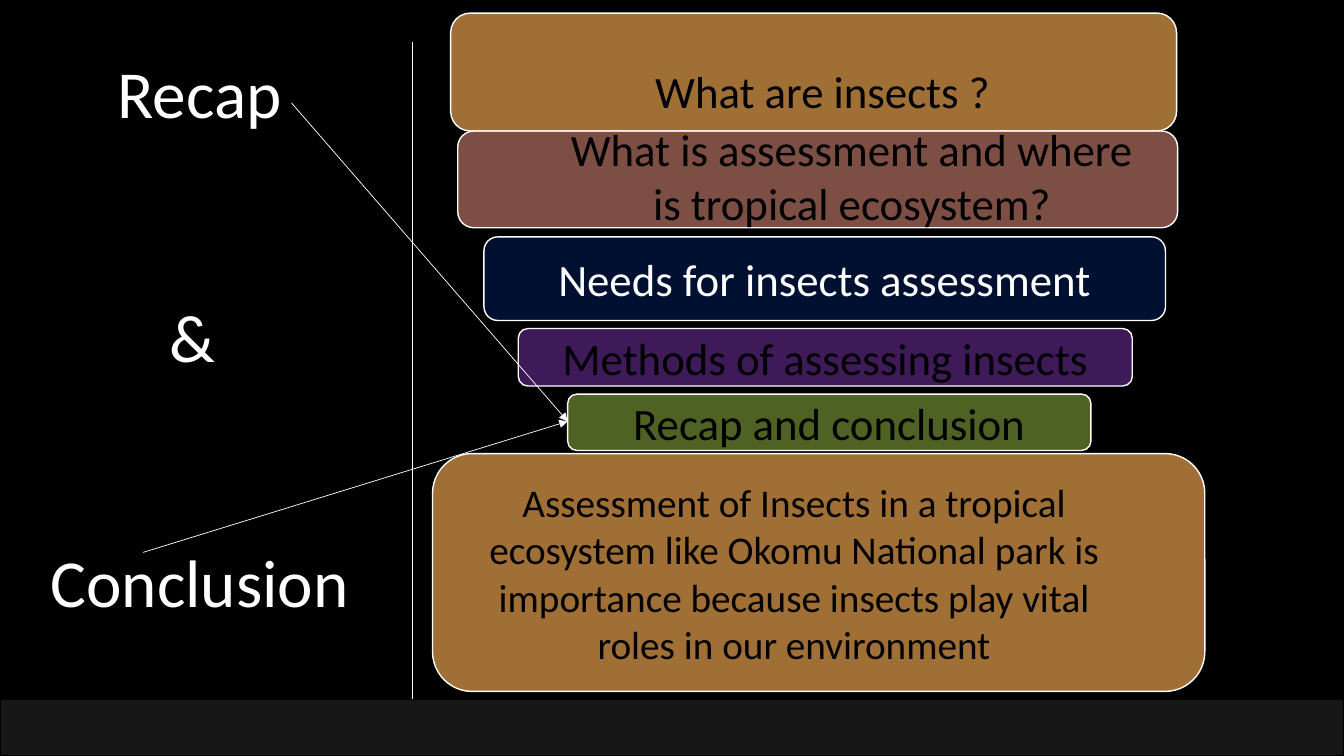
"""Build the recap and conclusion slide on insect assessment."""
from dataclasses import dataclass

import lxml.etree
import pptx
import pptx.dml.color
import pptx.enum.shapes
import pptx.enum.text
import pptx.oxml.ns
import pptx.util

Inches = pptx.util.Inches
Pt = pptx.util.Pt
Align = pptx.enum.text.PP_ALIGN
Preset = pptx.enum.shapes.MSO_SHAPE
qn = pptx.oxml.ns.qn

WHITE = "FFFFFF"
BLACK = "000000"


@dataclass(frozen=True)
class Panel:
    left: float
    top: float
    width: float
    height: float
    fill: str
    opacity: int = 100
    text: str = ""
    color: str = BLACK
    outline: str = WHITE
    preset: int = Preset.ROUNDED_RECTANGLE


@dataclass(frozen=True)
class Label:
    left: float
    top: float
    width: float
    height: float
    lines: tuple[str, ...]
    size: int = 32
    color: str = BLACK
    align: int = Align.CENTER
    gap: int = 0


@dataclass(frozen=True)
class Link:
    start: tuple[float, float]
    end: tuple[float, float]
    arrow: bool = True


TOPIC_ENTRY = (5.63, 4.18)

ELEMENTS = (
    Label(-1.77, 0.46, 7.5, 5.76, ("Recap", "& ", "Conclusion"), 48, WHITE, gap=117),
    Link((4.09, 0.42), (4.09, 6.94), arrow=False),
    Panel(4.47, 0.13, 7.2, 1.17, "DA994A", 73),
    Label(6.4, 0.58, 3.94, 0.64, ("What are insects ?",), align=Align.LEFT),
    Panel(4.54, 1.3, 7.14, 0.96, "E28F7D", 55),
    Panel(4.8, 2.35, 6.76, 0.83, "002060", 51, "Needs for insects assessment", WHITE),
    Panel(5.14, 3.26, 6.09, 0.57, "7030A0", 56, "Methods of assessing insects"),
    Panel(5.63, 3.91, 5.19, 0.56, "729134", 68, "Recap and conclusion"),
    Label(5.45, 1.16, 6, 1.18, ("What is assessment and where is tropical ecosystem?",)),
    Panel(0, 6.94, 13.33, 0.56, "181717", outline=BLACK, preset=Preset.RECTANGLE),
    Panel(4.29, 4.5, 7.66, 2.36, "DA994A", 73),
    Label(4.54, 4.7, 6.67, 1.99, (
        "Assessment of Insects in a tropical ecosystem like Okomu National park is "
        "importance because insects play vital roles in our environment",), 28),
    Link((2.89, 1.02), TOPIC_ENTRY),
    Link((1.42, 5.48), TOPIC_ENTRY),
)


def paint(target, color: str) -> None:
    """Give a fill a solid colour from a hex string."""
    target.solid()
    target.fore_color.rgb = pptx.dml.color.RGBColor.from_string(color)


def write(para, text: str, size: int, color: str, align: int) -> None:
    """Add one styled run to a paragraph."""
    para.alignment = align
    span = para.add_run()
    span.text = text
    span.font.name = "Calibri"
    span.font.size = Pt(size)
    paint(span.font.fill, color)


def draw_panel(slide, panel: Panel) -> None:
    """Draw a filled panel with optional centred text."""
    shape = slide.shapes.add_shape(
        panel.preset, Inches(panel.left), Inches(panel.top),
        Inches(panel.width), Inches(panel.height))
    shape.shadow.inherit = False
    paint(shape.fill, panel.fill)
    if panel.opacity < 100:
        tint = shape.fill._xPr.find(qn("a:solidFill"))[0]
        lxml.etree.SubElement(tint, qn("a:alpha"), val=str(panel.opacity * 1000))
    paint(shape.line.fill, panel.outline)
    shape.line.width = Pt(1)
    if panel.text:
        frame = shape.text_frame
        frame.word_wrap = True
        frame.vertical_anchor = pptx.enum.text.MSO_ANCHOR.MIDDLE
        write(frame.paragraphs[0], panel.text, 32, panel.color, Align.CENTER)


def draw_label(slide, label: Label) -> None:
    """Draw a text box with one paragraph per line."""
    box = slide.shapes.add_textbox(
        Inches(label.left), Inches(label.top), Inches(label.width), Inches(label.height))
    frame = box.text_frame
    frame.word_wrap = True
    frame.auto_size = pptx.enum.text.MSO_AUTO_SIZE.SHAPE_TO_FIT_TEXT
    for index, line in enumerate(label.lines):
        para = frame.add_paragraph() if index else frame.paragraphs[0]
        if index:
            para.space_before = Pt(label.gap)
        write(para, line, label.size, label.color, label.align)


def draw_link(slide, link: Link) -> None:
    """Draw a thin white line, with an arrowhead if asked."""
    connector = slide.shapes.add_connector(
        pptx.enum.shapes.MSO_CONNECTOR.STRAIGHT,
        *(Inches(value) for value in link.start + link.end))
    paint(connector.line.fill, WHITE)
    connector.line.width = Pt(0.5)
    properties = connector._element.spPr
    if link.arrow:
        outline = properties.find(qn("a:ln"))
        lxml.etree.SubElement(outline, qn("a:tailEnd"), type="triangle")
    lxml.etree.SubElement(properties, qn("a:effectLst"))


def main() -> None:
    """Create the deck and save it."""
    deck = pptx.Presentation()
    deck.slide_width = Inches(13.33)
    deck.slide_height = Inches(7.5)
    slide = deck.slides.add_slide(deck.slide_layouts[6])
    paint(slide.background.fill, BLACK)
    painters = {Panel: draw_panel, Label: draw_label, Link: draw_link}
    for element in ELEMENTS:
        painters[type(element)](slide, element)
    deck.save("out.pptx")


if __name__ == "__main__":
    main()
